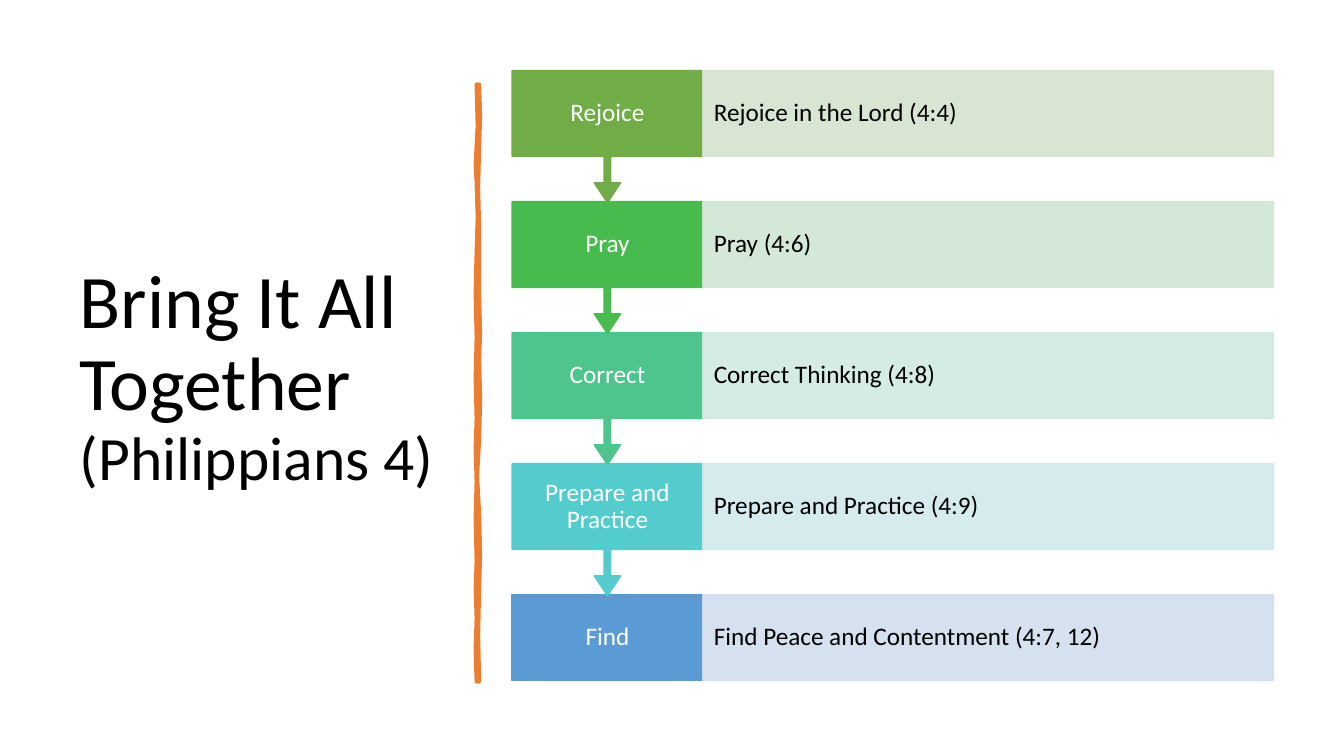
"""Build the "Bring It All Together" slide with its five-step flow."""
from dataclasses import dataclass

import lxml.etree
import pptx
import pptx.dml.color
import pptx.dml.fill
import pptx.enum.shapes
import pptx.enum.text
import pptx.oxml.ns
import pptx.shapes.autoshape
import pptx.slide
import pptx.util

Inches = pptx.util.Inches
Pt = pptx.util.Pt
SHAPES = pptx.enum.shapes.MSO_SHAPE
ALIGN = pptx.enum.text.PP_ALIGN
MIDDLE = pptx.enum.text.MSO_ANCHOR.MIDDLE

FONT = "Calibri"
STEP_TOP, STEP_PITCH = 0.7, 1.3
BOX_HEIGHT, CALLOUT_HEIGHT = 0.85, 1.31
LABEL_LEFT, LABEL_WIDTH = 5.08, 1.89
DETAIL_LEFT, DETAIL_WIDTH = 6.97, 5.66
CALLOUT_ADJUSTMENTS = (0.05, 0.1, 0.15, 0.65)

DIVIDER_RIGHT = [
    (475, 84), (476, 115), (475, 146), (474, 185), (475, 226), (475, 294),
    (476, 330), (475, 356), (476, 395), (475, 436), (473, 472), (475, 510),
    (476, 550), (475, 584), (474, 630), (475, 676),
]
DIVIDER_LEFT = [
    (473, 676), (472, 644), (473, 613), (472, 585), (473, 557), (472, 515),
    (473, 477), (472, 445), (473, 415), (472, 375), (473, 335), (472, 290),
    (473, 250), (474, 215), (473, 181), (472, 164), (474, 125), (473, 84),
]


@dataclass
class Step:
    """One stage of the flow: its label, its detail and their colours."""
    label: str
    detail: str
    color: str
    tint: str


STEPS = [
    Step("Rejoice", "Rejoice in the Lord (4:4)", "70AD47", "D5E3CF"),
    Step("Pray", "Pray (4:6)", "48BB4F", "D0E6D4"),
    Step("Correct", "Correct Thinking (4:8)", "4DC58D", "D0EAE1"),
    Step("Prepare and Practice", "Prepare and Practice (4:9)", "54CCCD", "D1E9ED"),
    Step("Find", "Find Peace and Contentment (4:7, 12)", "5B9BD5", "D2DEEF"),
]


def paint(fill: pptx.dml.fill.FillFormat, color: str) -> None:
    """Give a fill one solid colour."""
    fill.solid()
    fill.fore_color.rgb = pptx.dml.color.RGBColor.from_string(color)


def style(shape: pptx.shapes.autoshape.Shape, color: str, line_width: float = 1,
          opacity: int = 100) -> None:
    """Set one colour for fill and line, with optional transparency."""
    shape.shadow.inherit = False
    paint(shape.fill, color)
    paint(shape.line.fill, color)
    shape.line.width = Pt(line_width)
    if opacity < 100:
        for element in shape.element.spPr.iter(pptx.oxml.ns.qn("a:srgbClr")):
            alpha = lxml.etree.SubElement(element, pptx.oxml.ns.qn("a:alpha"))
            alpha.set("val", str(opacity * 1000))


def write(shape: pptx.shapes.autoshape.Shape, text: str, color: str,
          alignment: pptx.enum.text.PP_ALIGN, side: float, edge: float) -> None:
    """Write one vertically centred paragraph in a shape."""
    frame = shape.text_frame
    frame.word_wrap = True
    frame.vertical_anchor = MIDDLE
    frame.margin_left = frame.margin_right = Inches(side)
    frame.margin_top = frame.margin_bottom = Inches(edge)
    paragraph = frame.paragraphs[0]
    paragraph.text = text
    paragraph.alignment = alignment
    paragraph.line_spacing = 0.9
    paragraph.font.name = FONT
    paragraph.font.size = Pt(18)
    paint(paragraph.font.fill, color)


def add_title(slide: pptx.slide.Slide) -> None:
    """Place and format the slide title."""
    title = slide.shapes.title
    title.left, title.top = Inches(0.69), Inches(0.7)
    title.width, title.height = Inches(3.74), Inches(6.11)
    frame = title.text_frame
    frame.word_wrap = True
    frame.auto_size = pptx.enum.text.MSO_AUTO_SIZE.NONE
    frame.vertical_anchor = MIDDLE
    paragraph = frame.paragraphs[0]
    paragraph.alignment = ALIGN.LEFT
    paragraph.line_spacing = 0.9
    paragraph.font.name = FONT
    paint(paragraph.font.fill, "000000")
    for text, size in (("Bring It All Together ", 54), ("(Philippians 4)", 44)):
        run = paragraph.add_run()
        run.text = text
        run.font.size = Pt(size)


def add_divider(slide: pptx.slide.Slide) -> None:
    """Draw the wavy vertical divider from points in hundredths of an inch."""
    start, *points = DIVIDER_RIGHT + DIVIDER_LEFT
    builder = slide.shapes.build_freeform(*start, scale=Inches(0.01))
    builder.add_line_segments(points, close=True)
    style(builder.convert_to_shape(), "ED7D31", 3.25)


def add_step(slide: pptx.slide.Slide, step: Step, top: float, is_last: bool) -> None:
    """Draw a step label, with an arrow to the next one, and its detail."""
    label = slide.shapes.add_shape(
        SHAPES.RECTANGLE if is_last else SHAPES.DOWN_ARROW_CALLOUT,
        Inches(LABEL_LEFT), Inches(top), Inches(LABEL_WIDTH),
        Inches(BOX_HEIGHT if is_last else CALLOUT_HEIGHT))
    if not is_last:
        for index, value in enumerate(CALLOUT_ADJUSTMENTS):
            label.adjustments[index] = value
    style(label, step.color)
    write(label, step.label, "FFFFFF", ALIGN.CENTER, 0.13, 0.14)

    detail = slide.shapes.add_shape(
        SHAPES.RECTANGLE, Inches(DETAIL_LEFT), Inches(top),
        Inches(DETAIL_WIDTH), Inches(BOX_HEIGHT))
    style(detail, step.tint, opacity=90)
    write(detail, step.detail, "000000", ALIGN.LEFT, 0.11, 0.25)


def main() -> None:
    """Build and save the presentation."""
    presentation = pptx.Presentation()
    presentation.slide_width = Inches(13.33)
    presentation.slide_height = Inches(7.5)
    slide = presentation.slides.add_slide(presentation.slide_layouts[5])
    paint(slide.background.fill, "FFFFFF")
    add_title(slide)
    add_divider(slide)
    for index, step in reversed(list(enumerate(STEPS))):
        add_step(slide, step, STEP_TOP + index * STEP_PITCH, step is STEPS[-1])
    presentation.save("out.pptx")


if __name__ == "__main__":
    main()
